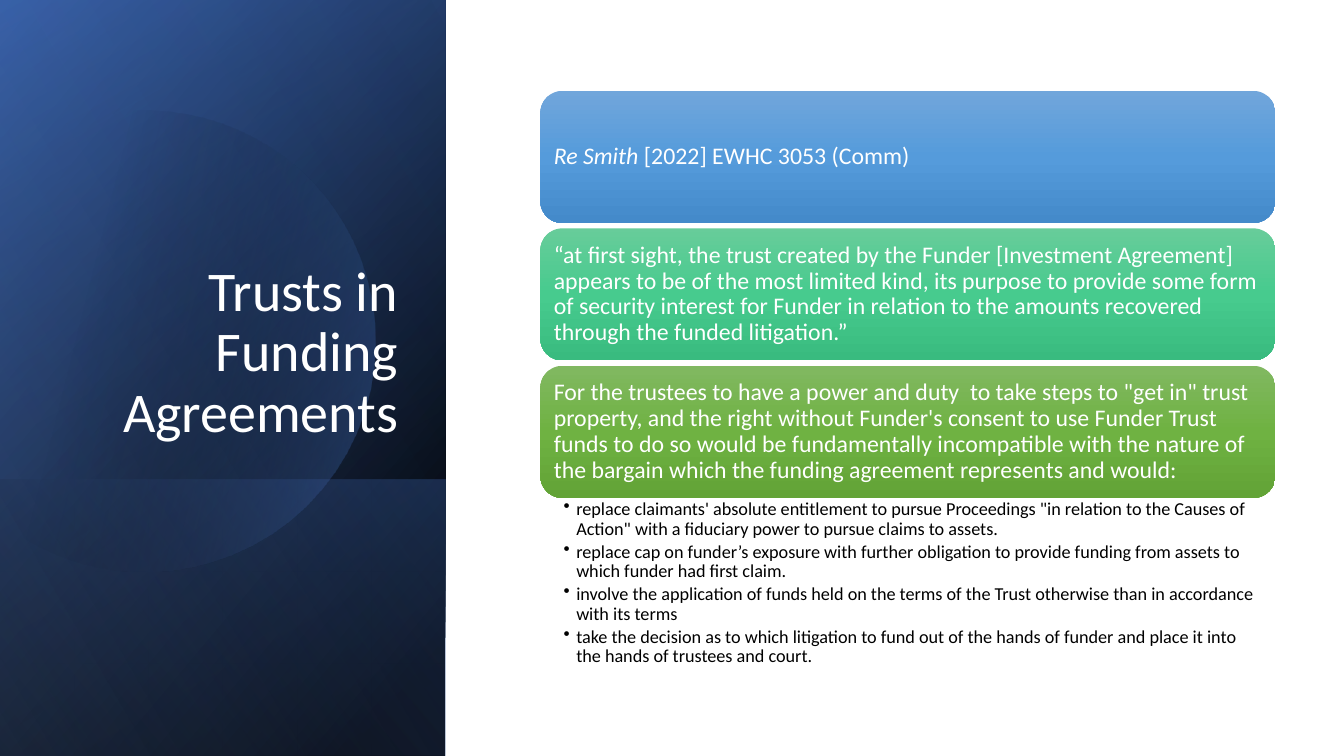
from lxml import etree
from pptx import Presentation
from pptx.dml.color import RGBColor
from pptx.enum.shapes import MSO_SHAPE as SHAPE
from pptx.enum.text import MSO_ANCHOR as ANCHOR, PP_ALIGN as ALIGN
from pptx.oxml.ns import qn
from pptx.util import Pt

SLIDE_W, SLIDE_H = 960, 540
PANEL_W = 318.2
FONT = "Calibri"

BLACK = RGBColor(0x00, 0x00, 0x00)
WHITE = RGBColor(0xFF, 0xFF, 0xFF)
NAVY = RGBColor(0x2F, 0x55, 0x97)
BLUE = RGBColor(0x44, 0x72, 0xC4)
PALE_BLUE = RGBColor(0x8F, 0xAA, 0xDC)
SKY_CARD = [RGBColor(0x71, 0xA6, 0xDB), RGBColor(0x55, 0x9B, 0xDB), RGBColor(0x44, 0x8A, 0xCA)]
MINT_CARD = [RGBColor(0x67, 0xCC, 0x9A), RGBColor(0x47, 0xCB, 0x8E), RGBColor(0x39, 0xBB, 0x7F)]
LEAF_CARD = [RGBColor(0x81, 0xB8, 0x61), RGBColor(0x6F, 0xB2, 0x42), RGBColor(0x62, 0xA3, 0x36)]

CARD_X, CARD_Y, CARD_W, CARD_H, CARD_PITCH = 386, 64.9, 525, 94.3, 98.2

# Each text is a list of (wording, italic) runs.
CARDS = [
    (SKY_CARD, [("Re Smith ", True), ("[2022] EWHC 3053 (Comm)", False)]),
    (MINT_CARD, [(
        "“at first sight, the trust created by the Funder [Investment Agreement] "
        "appears to be of the most limited kind, its purpose to provide some form of "
        "security interest for Funder in relation to the amounts recovered through "
        "the funded litigation.”", False)]),
    (LEAF_CARD, [(
        "For the trustees to have a power and duty  to take steps to \"get in\" trust "
        "property, and the right without Funder's consent to use Funder Trust funds "
        "to do so would be fundamentally incompatible with the nature of the bargain "
        "which the funding agreement represents and would:", False)]),
]
CONSEQUENCES = [
    "replace claimants' absolute entitlement to pursue Proceedings \"in relation to the "
    "Causes of Action\" with a fiduciary power to pursue claims to assets.",
    "replace cap on funder’s exposure with further obligation to provide funding from "
    "assets to which funder had first claim.",
    "involve the application of funds held on the terms of the Trust otherwise than in "
    "accordance with its terms",
    "take the decision as to which litigation to fund out of the hands of funder and "
    "place it into the hands of trustees and court.",
]

DISC_START = (107.3, 79.2)
DISC_RIGHT = [
    [(177.1, 80.6), (241.2, 127.4), (261.4, 198)],
    [(286.6, 285.8), (236.2, 376.6), (149, 401.8)],
    [(94.3, 417.6), (38.2, 403.9), (-2.2, 370.1)],
]
DISC_CUT = [(-10.8, 362.2), (-10.8, 126), (0, 115.9)]
DISC_TOP = [
    [(16.6, 102.2), (36, 92.9), (57.6, 85.7)],
    [(74.2, 81.4), (90.7, 79.2), DISC_START],
]


def fill_gradient(sp, stops, angle):
    """Fill with (percent, colour, opacity percent) stops and drop line and shadow."""
    sp.shadow.inherit = False
    sp.line.fill.background()
    sp.fill.background()
    no_fill = sp._element.spPr.find(qn("a:noFill"))
    grad = etree.Element(qn("a:gradFill"), rotWithShape="1")
    stop_list = etree.SubElement(grad, qn("a:gsLst"))
    for percent, color, opacity in stops:
        gs = etree.SubElement(stop_list, qn("a:gs"), pos=str(percent * 1000))
        clr = etree.SubElement(gs, qn("a:srgbClr"), val=str(color))
        if opacity < 100:
            etree.SubElement(clr, qn("a:alpha"), val=str(opacity * 1000))
    etree.SubElement(grad, qn("a:lin"), ang=str(angle * 60000), scaled="0")
    no_fill.getparent().replace(no_fill, grad)


def add_panel_layer(s, top, stops, angle):
    """Cover the left panel from top to the slide's foot with a turned, mirrored box."""
    length = SLIDE_H - top
    sp = s.shapes.add_shape(
        SHAPE.RECTANGLE, Pt((PANEL_W - length) / 2), Pt(top + (length - PANEL_W) / 2),
        Pt(length), Pt(PANEL_W))
    sp.rotation = 90
    sp._element.spPr.find(qn("a:xfrm")).set("flipH", "1")
    fill_gradient(sp, stops, angle)


def curve_points(start, curves, steps=16):
    """Sample a chain of cubic Bezier curves."""
    points = []
    for c1, c2, end in curves:
        for i in range(1, steps + 1):
            t = i / steps
            u = 1 - t
            points.append(tuple(
                u**3 * a + 3 * u * u * t * b + 3 * u * t * t * c + t**3 * d
                for a, b, c, d in zip(start, c1, c2, end)))
        start = end
    return points


def add_disc(s):
    points = (curve_points(DISC_START, DISC_RIGHT) + DISC_CUT
              + curve_points(DISC_CUT[-1], DISC_TOP))
    builder = s.shapes.build_freeform(Pt(DISC_START[0]), Pt(DISC_START[1]))
    builder.add_line_segments([(Pt(x), Pt(y)) for x, y in points], close=True)
    fill_gradient(builder.convert_to_shape(), [(29, BLACK, 0), (100, BLUE, 43)], 14)


def set_frame(sp, anchor, insets):
    tf = sp.text_frame
    tf.word_wrap = True
    tf.vertical_anchor = anchor
    tf.margin_left, tf.margin_top, tf.margin_right, tf.margin_bottom = map(Pt, insets)
    return tf


def write_paragraph(p, runs, size, color, align=ALIGN.LEFT):
    p.alignment = align
    p.line_spacing = 0.9
    p.font.name, p.font.size = FONT, Pt(size)
    p.font.color.rgb = color
    for wording, italic in runs:
        r = p.add_run()
        r.text = wording
        if italic:
            r.font.italic = True


def add_title(s):
    sp = s.shapes.add_textbox(Pt(46), Pt(132.5), Pt(245.5), Pt(188.6))
    tf = set_frame(sp, ANCHOR.BOTTOM, (7.2, 3.6, 7.2, 3.6))
    write_paragraph(tf.paragraphs[0], [("Trusts in Funding Agreements", False)],
                    40, WHITE, ALIGN.RIGHT)


def add_card(s, top, colors, runs):
    sp = s.shapes.add_shape(SHAPE.ROUNDED_RECTANGLE, Pt(CARD_X), Pt(top),
                            Pt(CARD_W), Pt(CARD_H))
    fill_gradient(sp, [(i * 50, color, 100) for i, color in enumerate(colors)], 90)
    tf = set_frame(sp, ANCHOR.MIDDLE, (5, 5, 5, 5))
    write_paragraph(tf.paragraphs[0], runs, 17, WHITE)


def add_bullets(s, top, items):
    sp = s.shapes.add_textbox(Pt(CARD_X), Pt(top), Pt(CARD_W), Pt(127.4))
    tf = set_frame(sp, ANCHOR.TOP, (16.6, 1.5, 9.3, 1.5))
    for i, item in enumerate(items):
        p = tf.add_paragraph() if i else tf.paragraphs[0]
        write_paragraph(p, [(item, False)], 13, BLACK)
        p.space_after = Pt(2.2)
        pPr = p._p.get_or_add_pPr()
        pPr.set("marL", str(Pt(9)))
        pPr.set("indent", str(Pt(-9)))
        bullet = etree.Element(qn("a:buChar"), char="•")
        pPr.find(qn("a:defRPr")).addprevious(bullet)


def main():
    prs = Presentation()
    prs.slide_width, prs.slide_height = Pt(SLIDE_W), Pt(SLIDE_H)
    s = prs.slides.add_slide(prs.slide_layouts[6])

    add_panel_layer(s, 0, [(8, BLACK, 100), (100, NAVY, 100)], 50)
    add_panel_layer(s, 0, [(0, BLACK, 0), (99, BLUE, 46)], 30)
    add_panel_layer(s, 342.7, [(2, BLUE, 29), (100, BLACK, 30)], 130)
    add_disc(s)
    add_panel_layer(s, 0, [(0, BLACK, 0), (99, PALE_BLUE, 11)], 120)

    add_title(s)
    for i, (colors, runs) in enumerate(CARDS):
        add_card(s, CARD_Y + i * CARD_PITCH, colors, runs)
    add_bullets(s, CARD_Y + 2 * CARD_PITCH + CARD_H, CONSEQUENCES)

    prs.save("out.pptx")


if __name__ == "__main__":
    main()
